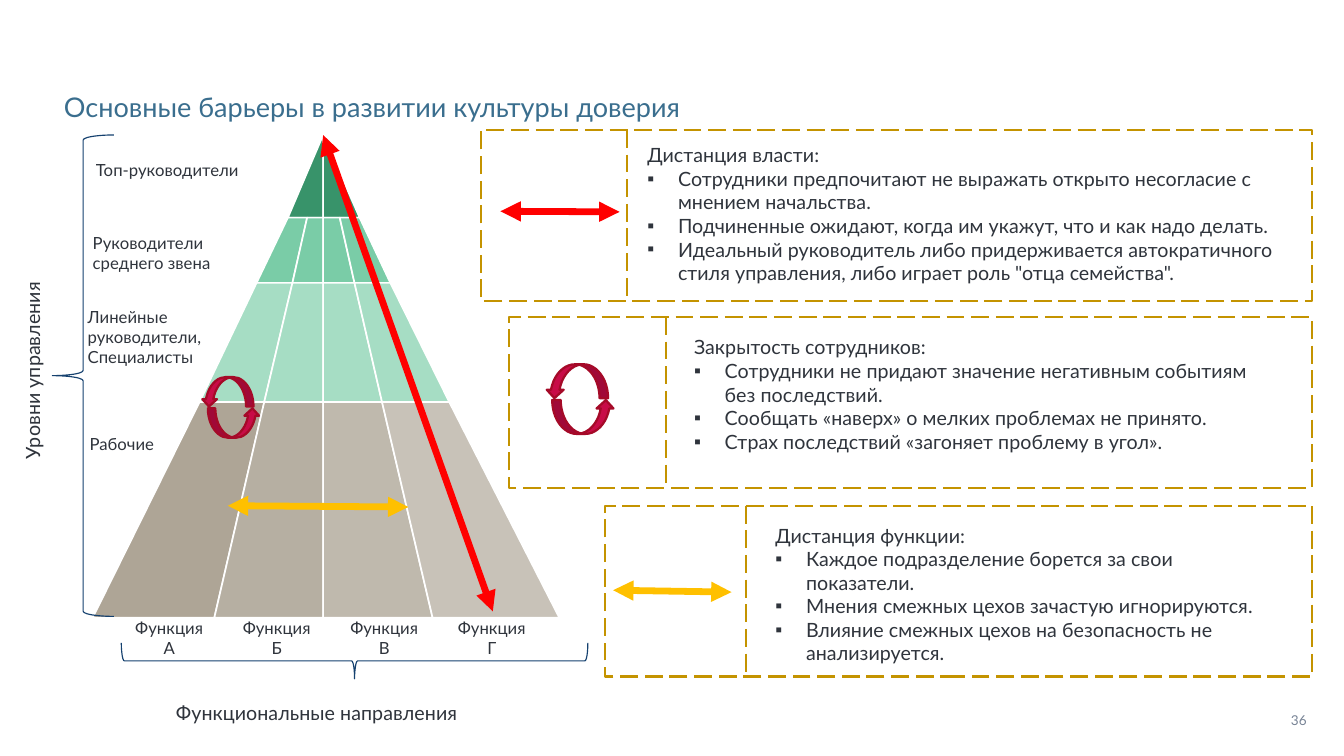
import pptx
import pptx.dml.color
import pptx.enum.dml
import pptx.enum.shapes
import pptx.enum.text
import pptx.oxml.ns
import pptx.util
from lxml import etree

Cm = pptx.util.Cm
Pt = pptx.util.Pt
Shapes = pptx.enum.shapes.MSO_SHAPE
Align = pptx.enum.text.PP_ALIGN
Anchor = pptx.enum.text.MSO_ANCHOR
qn = pptx.oxml.ns.qn

COLORS = {
    "title": "3A6E8E", "text": "2F343C", "number": "778395",
    "brace": "15416F", "frame": "C49300", "white": "FFFFFF",
    "power": "FF0000", "function": "FFC000",
    "cycle": "C80C47", "cycle_edge": "A50A28",
    "top": "38936A", "middle": "7ACCA7", "line": "A6DDC4",
    "worker_a": "AEA596", "worker_b": "B6AFA2",
    "worker_c": "BFB9AD", "worker_d": "C8C2B8",
}

TIERS = [
    (2.11, 3.4, [5.05] * 3, [4.5, 5.05, 5.62], ["top"] * 2),
    (3.4, 4.42, [4.5, 4.8, 5.05, 5.31, 5.62], [4.01, 4.57, 5.05, 5.54, 6.1], ["middle"] * 4),
    (4.42, 6.28, [4.01, 4.57, 5.05, 5.54, 6.1], [3.12, 4.13, 5.05, 5.97, 7.02], ["line"] * 4),
    (6.28, 9.65, [3.12, 4.13, 5.05, 5.97, 7.02], [1.45, 3.35, 5.05, 6.76, 8.74],
     ["worker_a", "worker_b", "worker_c", "worker_d"]),
]

LEVELS = [
    (1.32, 2.39, ["Топ-руководители"]),
    (1.27, 3.53, ["Руководители", "среднего звена"]),
    (1.19, 4.7, ["Линейные", "руководители,", "Специалисты"]),
    (1.22, 6.68, ["Рабочие"]),
]

BARRIERS = [
    {"frame": (7.52, 2.03), "divider": 9.8, "text": (9.86, 2.11, 10.31, 2.49),
     "lines": ["Дистанция власти:",
               "Сотрудники предпочитают не выражать открыто несогласие с мнением начальства.",
               "Подчиненные ожидают, когда им укажут, что и как надо делать.",
               "Идеальный руководитель либо придерживается автократичного стиля управления, "
               "либо играет роль \"отца семейства\"."]},
    {"frame": (7.95, 4.95), "divider": 10.41, "text": (10.59, 5.11, 9.58, 2.11),
     "lines": ["Закрытость сотрудников:",
               "Сотрудники не придают значение негативным событиям без последствий.",
               "Сообщать «наверх» о мелких проблемах не принято.",
               "Страх последствий «загоняет проблему в угол»."]},
    {"frame": (9.45, 7.9), "divider": 11.66, "text": (11.86, 8.05, 8.41, 2.49),
     "lines": ["Дистанция функции:",
               "Каждое подразделение борется за свои показатели.",
               "Мнения смежных цехов зачастую игнорируются.",
               "Влияние смежных цехов на безопасность не анализируется."]},
]
FRAME_RIGHT = 20.5
FRAME_HEIGHT = 2.67

ARROWS = [
    (5.05, 2.11, 7.7, 9.55, "power"),
    (3.56, 7.9, 6.38, 7.92, "function"),
    (7.82, 3.3, 9.68, 3.31, "power"),
    (9.58, 9.22, 11.43, 9.25, "function"),
]


def rgb(name):
    return pptx.dml.color.RGBColor.from_string(COLORS[name])


def apply(target, values):
    for name, value in values.items():
        setattr(target, name, value)


def write(paragraph, text, size, color="text", align=Align.LEFT):
    apply(paragraph, {"alignment": align, "space_before": Pt(0)})
    run = paragraph.add_run()
    run.text = text
    apply(run.font, {"name": "Lato", "size": Pt(size), "bold": False})
    run.font.color.rgb = rgb(color)


def place(shape, left, top, width, height):
    apply(shape, {"left": Cm(left), "top": Cm(top), "width": Cm(width), "height": Cm(height)})


def set_bullet(paragraph, char=None):
    properties = paragraph._p.get_or_add_pPr()
    indent = Cm(0.48) if char else 0
    properties.set("marL", str(indent))
    properties.set("indent", str(-indent))
    bullet = etree.SubElement(properties, qn("a:buChar" if char else "a:buNone"))
    if char:
        bullet.set("char", char)


def add_label(slide, box, lines, size, align=Align.LEFT, color="text", rotation=0, inset=(0.18, 0.1)):
    label = slide.shapes.add_textbox(*map(Cm, box))
    label.rotation = rotation
    side, edge = map(Cm, inset)
    apply(label.text_frame, {"word_wrap": True, "margin_left": side, "margin_right": side,
                             "margin_top": edge, "margin_bottom": edge})
    for index, line in enumerate(lines):
        paragraph = label.text_frame.add_paragraph() if index else label.text_frame.paragraphs[0]
        write(paragraph, line, size, color, align)
    return label


def style_shape(shape, fill, line, width):
    shape.shadow.inherit = False
    if fill:
        shape.fill.solid()
        shape.fill.fore_color.rgb = rgb(fill)
    else:
        shape.fill.background()
    shape.line.color.rgb = rgb(line)
    shape.line.width = Pt(width)


def add_preset(slide, kind, box, fill, line, width, rotation=0):
    shape = slide.shapes.add_shape(kind, *map(Cm, box))
    style_shape(shape, fill, line, width)
    shape.rotation = rotation
    return shape


def add_line(slide, ends, color, width):
    connector = slide.shapes.add_connector(
        pptx.enum.shapes.MSO_CONNECTOR.STRAIGHT, *map(Cm, ends))
    connector.line.color.rgb = rgb(color)
    connector.line.width = Pt(width)
    etree.SubElement(connector.element.spPr, qn("a:effectLst"))
    return connector


def add_double_arrow(slide, ends, color):
    line = add_line(slide, ends, color, 3).element.spPr.find(qn("a:ln"))
    for tag in ("a:headEnd", "a:tailEnd"):
        etree.SubElement(line, qn(tag)).set("type", "triangle")


def add_tier(slide, top, bottom, top_xs, bottom_xs, fills):
    for index, fill in enumerate(fills):
        corners = [(bottom_xs[index], bottom), (bottom_xs[index + 1], bottom),
                   (top_xs[index + 1], top), (top_xs[index], top)]
        points = [(Cm(x), Cm(y)) for x, y in corners]
        builder = slide.shapes.build_freeform(*points[0])
        builder.add_line_segments(points[1:], close=True)
        style_shape(builder.convert_to_shape(), fill, "white", 0)


def add_cycle(slide, left, top, width, height):
    lower = (left + 0.1, top + height + 0.03, width, height)
    for box, rotation in ((lower, 0), ((left, top, width, height), 180)):
        add_preset(slide, Shapes.CURVED_UP_ARROW, box, "cycle", "cycle_edge", 1, rotation)


def add_barrier(slide, placeholder, barrier):
    place(placeholder, *barrier["text"])
    frame = placeholder.text_frame
    apply(frame, {"word_wrap": True, "vertical_anchor": Anchor.TOP,
                  "auto_size": pptx.enum.text.MSO_AUTO_SIZE.NONE})
    for index, line in enumerate(barrier["lines"]):
        paragraph = frame.add_paragraph() if index else frame.paragraphs[0]
        set_bullet(paragraph, "▪" if index else None)
        write(paragraph, line, 8.7)
    left, top = barrier["frame"]
    divider = barrier["divider"]
    border = add_preset(slide, Shapes.RECTANGLE, (left, top, FRAME_RIGHT - left, FRAME_HEIGHT),
                        None, "frame", 1)
    separator = add_line(slide, (divider, top, divider, top + FRAME_HEIGHT), "frame", 1)
    for shape in (border, separator):
        shape.line.dash_style = pptx.enum.dml.MSO_LINE.LONG_DASH


def main():
    presentation = pptx.Presentation()
    apply(presentation, {"slide_width": Cm(21), "slide_height": Cm(11.81)})
    slide = presentation.slides.add_slide(presentation.slide_layouts[4])
    title, *bodies = list(slide.placeholders)
    spare = bodies.pop().element
    spare.getparent().remove(spare)

    place(title, 1, 1.27, 18.87, 0.8)
    apply(title.text_frame, {"margin_left": 0, "vertical_anchor": Anchor.MIDDLE})
    write(title.text_frame.paragraphs[0], "Основные барьеры в развитии культуры доверия", 12, "title")

    for tier in TIERS:
        add_tier(slide, *tier)
    for left, top, lines in LEVELS:
        add_label(slide, (left, top, 3.4, 0.2 + 0.31 * len(lines)), lines, 7.4)
    for index, letter in enumerate("АБВГ"):
        add_label(slide, (1.73 + 1.68 * index, 9.55, 1.83, 0.82), ["Функция", letter], 7.4, Align.CENTER)

    add_preset(slide, Shapes.LEFT_BRACE, (0.82, 2.11, 0.96, 7.52), None, "brace", 0.5)
    add_preset(slide, Shapes.RIGHT_BRACE, (5.26, 6.68, 0.56, 7.29), None, "brace", 0.5, 90)
    add_label(slide, (-2.11, 4.45, 5.23, 0.57), ["Уровни управления"], 8.7, rotation=270)
    add_label(slide, (2.57, 10.85, 5.23, 0.57), ["Функциональные направления"], 8.7)

    for placeholder, barrier in zip(bodies, BARRIERS):
        add_barrier(slide, placeholder, barrier)
    for *ends, color in ARROWS:
        add_double_arrow(slide, ends, color)
    add_cycle(slide, 8.53, 5.69, 0.97, 0.53)
    add_cycle(slide, 3.15, 5.89, 0.81, 0.46)

    number = add_label(slide, (19.89, 11.13, 0.81, 0.25), ["36"], 6, Align.CENTER, "number", inset=(0, 0))
    number.text_frame.vertical_anchor = Anchor.MIDDLE
    presentation.save("out.pptx")


if __name__ == "__main__":
    main()
